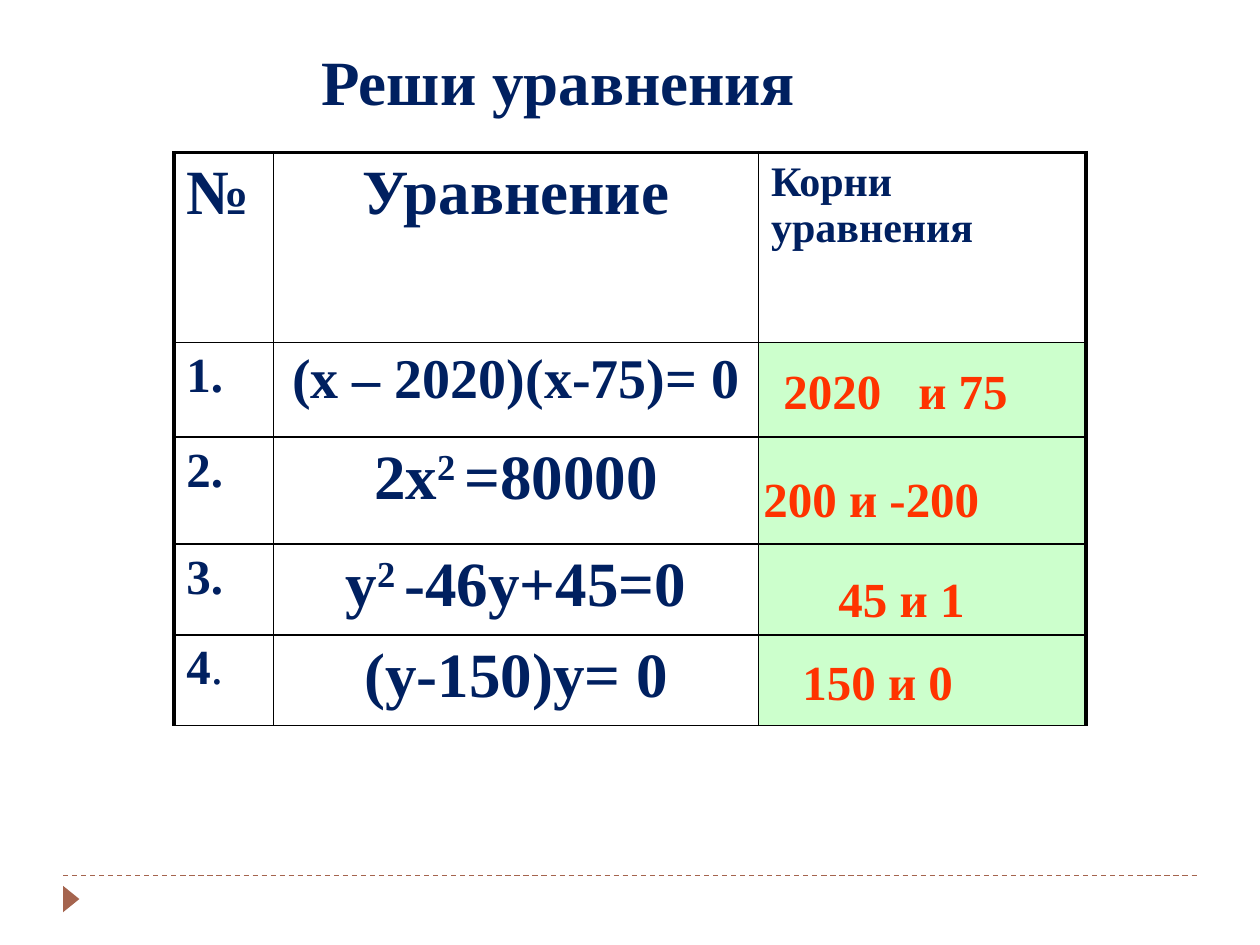
"""Build a slide with a table of equations and their roots."""
from lxml import etree
from pptx import Presentation
from pptx import util as u
from pptx.dml.color import RGBColor
from pptx.enum import dml, shapes, text
from pptx.oxml import ns

NAVY = RGBColor(0x00, 0x20, 0x60)
RED = RGBColor(0xFF, 0x33, 0x00)
GREEN = RGBColor(0xCC, 0xFF, 0xCC)
BROWN = RGBColor(0xA5, 0x64, 0x4E)
BLACK = RGBColor(0x00, 0x00, 0x00)
FONT = "Times New Roman"
LEFT, CENTER = text.PP_ALIGN.LEFT, text.PP_ALIGN.CENTER
THIN, THICK = 1, 2.25


class Deck:
    """Holds the style and the current slide; lengths are percent of its size."""

    def __init__(self):
        self.prs = Presentation()
        self.prs.slide_width, self.prs.slide_height = u.Inches(10), u.Inches(7.5)
        self.s = self.prs.slides.add_slide(self.prs.slide_layouts[5])

    def x(self, share):
        return round(self.prs.slide_width * share / 100)

    def y(self, share):
        return round(self.prs.slide_height * share / 100)

    def box(self, left, top, width, height):
        return self.x(left), self.y(top), self.x(width), self.y(height)

    def add_words(self, p, words, size, color, align=LEFT):
        p.alignment = align
        for i, part in enumerate(words.split("^")):
            r = p.add_run()
            r.text = part
            r.font.name, r.font.size, r.font.bold = FONT, u.Pt(size), True
            r.font.color.rgb = color
            if i % 2:
                r._r.get_or_add_rPr().set("baseline", "30000")

    def title(self, words, *place):
        sp = self.s.shapes.title
        sp.left, sp.top, sp.width, sp.height = self.box(*place)
        tf = sp.text_frame
        tf.vertical_anchor = text.MSO_ANCHOR.TOP
        tf.auto_size = text.MSO_AUTO_SIZE.NONE
        self.add_words(tf.paragraphs[0], words, 36, NAVY, CENTER)

    def label(self, words, *place, align=CENTER, tab=None):
        tf = self.s.shapes.add_textbox(*self.box(*place)).text_frame
        tf.word_wrap = True
        p = tf.paragraphs[0]
        if tab:
            tabs = etree.SubElement(p._p.get_or_add_pPr(), ns.qn("a:tabLst"))
            etree.SubElement(tabs, ns.qn("a:tab"), pos=str(self.x(tab)), algn="l")
        self.add_words(p, words, 28, RED, align)

    def rule(self, left, right, top):
        cx = self.s.shapes.add_connector(
            shapes.MSO_CONNECTOR.STRAIGHT,
            self.x(left), self.y(top), self.x(right), self.y(top))
        cx.line.color.rgb, cx.line.width = BROWN, u.Pt(0.75)
        cx.line.dash_style = dml.MSO_LINE.DASH
        etree.SubElement(cx._element.spPr, ns.qn("a:effectLst"))

    def marker(self, *place):
        sp = self.s.shapes.add_shape(
            shapes.MSO_SHAPE.ISOSCELES_TRIANGLE, *self.box(*place))
        sp.rotation = 90
        sp.shadow.inherit = False
        sp.fill.solid()
        sp.fill.fore_color.rgb = BROWN
        sp.line.fill.background()

    def borders(self, cell, widths):
        tcPr = cell._tc.get_or_add_tcPr()
        for i, (side, width) in enumerate(widths.items()):
            ln = etree.Element(ns.qn(f"a:ln{side}"), w=str(u.Pt(width)))
            fill = etree.SubElement(ln, ns.qn("a:solidFill"))
            etree.SubElement(fill, ns.qn("a:srgbClr"), val=str(BLACK))
            tcPr.insert(i, ln)

    def table(self, rows, left, top, widths, heights):
        place = self.box(left, top, sum(widths), sum(heights))
        table = self.s.shapes.add_table(len(rows), len(widths), *place).table
        table.first_row = table.horz_banding = False
        for column, width in zip(table.columns, widths):
            column.width = self.x(width)
        for row, height in zip(table.rows, heights):
            row.height = self.y(height)
        last = len(widths) - 1
        for i, row in enumerate(rows):
            for j, (words, size) in enumerate(row):
                cell = table.cell(i, j)
                if words:
                    self.add_words(cell.text_frame.paragraphs[0], words, size,
                                   NAVY, CENTER if j == 1 else LEFT)
                if i and j == last:
                    cell.fill.solid()
                    cell.fill.fore_color.rgb = GREEN
                else:
                    cell.fill.background()
                self.borders(cell, {"L": THIN if j else THICK,
                                    "R": THICK if j == last else THIN,
                                    "T": THIN if i else THICK,
                                    "B": THIN})
        return table


def main():
    deck = Deck()
    deck.rule(5, 95, 92.67)
    deck.marker(4.6, 94.27, 2.1, 1.73)
    deck.title("Реши уравнения", 4.7, 3.87, 79.2, 9.47)

    equations = [("(х – 2020)(х-75)= 0", 32), ("2х^2 ^=80000", 36),
                 ("у^2 ^-46у+45=0", 36), ("(у-150)у= 0", 36)]
    rows = [[("№", 36), ("Уравнение", 36), ("Корни уравнения", 24)]]
    rows += [[(f"{n}.", 28), equation, ("", 28)]
             for n, equation in enumerate(equations, 1)]
    rows[-1][0] = ("4", 28)
    table = deck.table(rows, 13.8, 16.13, [7.9, 38.5, 26],
                       [20.13, 10, 11.33, 9.6, 9.6])
    p = table.cell(4, 0).text_frame.paragraphs[0]
    deck.add_words(p, ".", 28, NAVY)
    p.runs[-1].font.bold = False

    deck.label("2020\tи 75", 61.2, 37.47, 22.7, 7.6, align=LEFT, tab=10.7)
    deck.label("200 и -200", 55.7, 48.93, 26.9, 7.6)
    deck.label("45 и 1", 57, 59.47, 29.1, 7.6)
    deck.label("150 и 0", 62.7, 68.27, 20.4, 7.6, align=LEFT)
    deck.prs.save("out.pptx")


if __name__ == "__main__":
    main()
